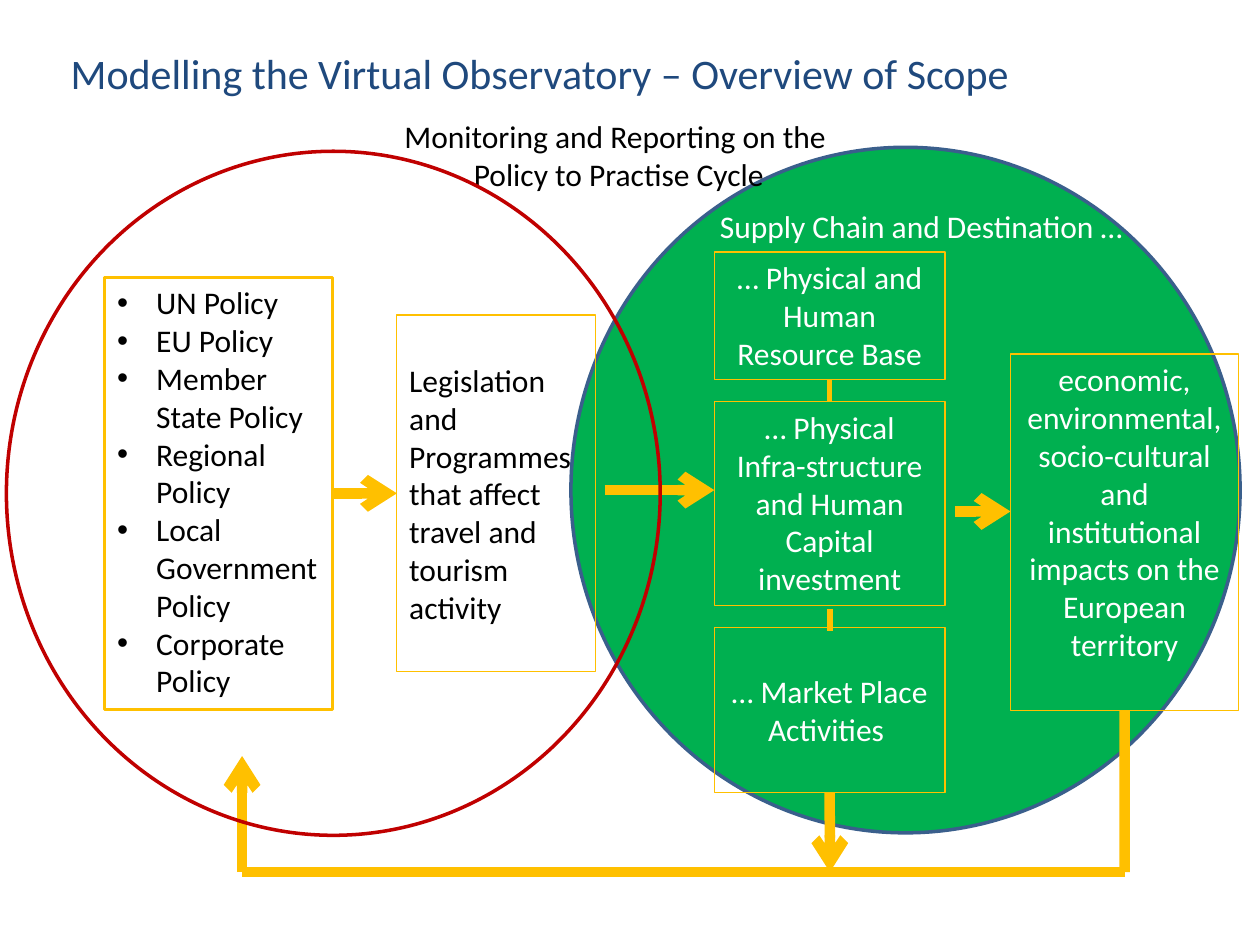
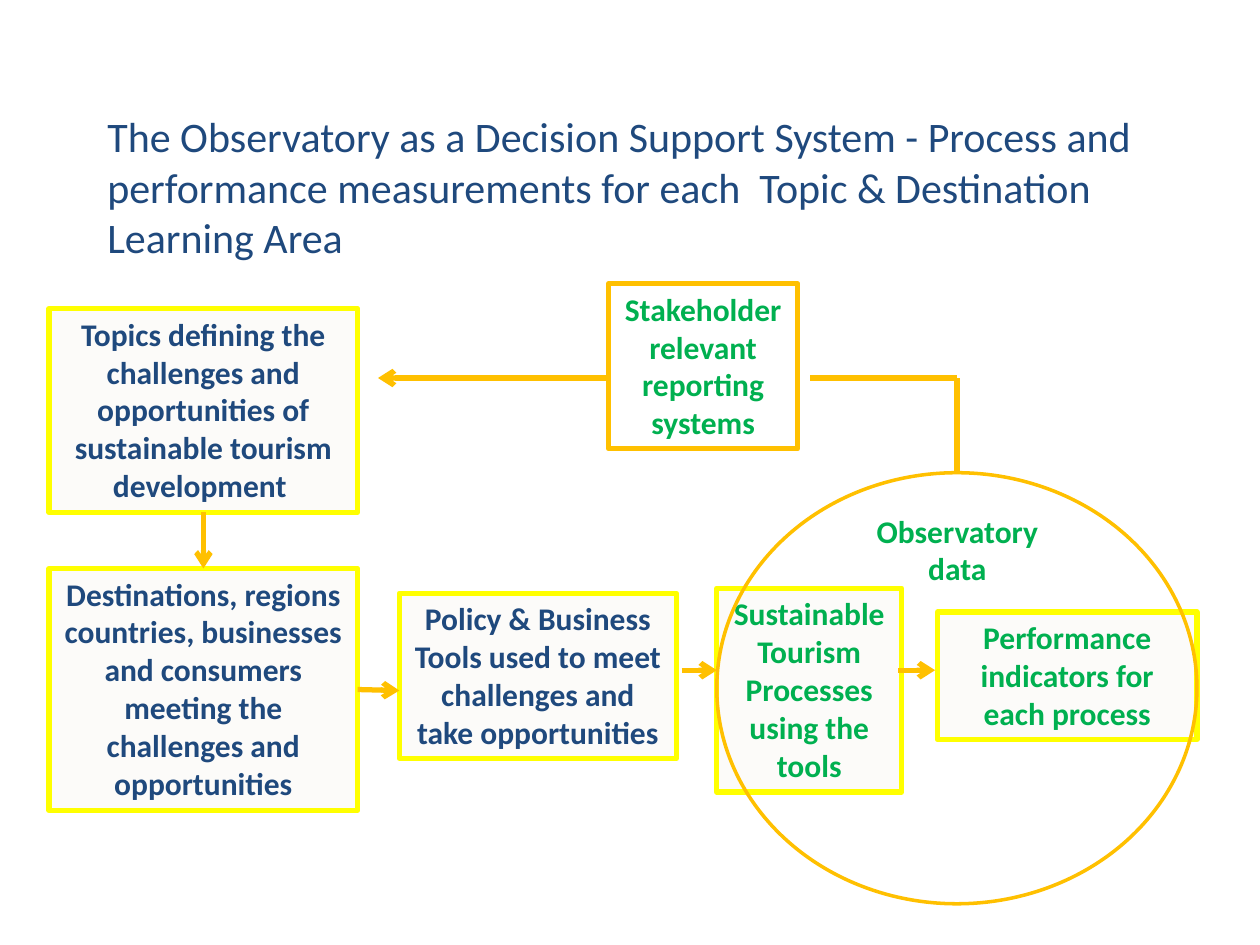
from lxml import etree
from pptx import Presentation
from pptx.dml.color import RGBColor
from pptx.enum.shapes import MSO_CONNECTOR, MSO_SHAPE
from pptx.enum.text import MSO_ANCHOR, MSO_AUTO_SIZE, PP_ALIGN
from pptx.oxml.ns import qn
from pptx.util import Cm, Pt

NAVY, GREEN, AMBER, YELLOW = "1F497D", "00B050", "FFC000", "FFFF00"
RED, STEEL, CREAM, BLACK, WHITE = "C00000", "3A5F8C", "FCFBF9", "000000", "FFFFFF"
TOP, LEFT, BOTTOM, RIGHT = range(4)


def rgb(value):
    return RGBColor.from_string(value)


class Deck:
    """Holds the shared style and the slide being built."""

    frame = {"word_wrap": True, "auto_size": MSO_AUTO_SIZE.NONE}
    font = {"name": "Calibri", "size": Pt(18), "bold": False}
    title_font = {"size": Pt(24)}

    def __init__(self):
        self.prs = Presentation()
        self.prs.slide_width, self.prs.slide_height = Cm(25.4), Cm(19.05)
        self.s = None

    def apply(self, target, values):
        for name, value in values.items():
            setattr(target, name, value)

    def text(self, sp, paragraphs, color, align=PP_ALIGN.CENTER,
             anchor=MSO_ANCHOR.TOP, bullets=False, **font):
        tf = sp.text_frame
        self.apply(tf, {**self.frame, "vertical_anchor": anchor})
        for i, words in enumerate(paragraphs):
            p = tf.add_paragraph() if i else tf.paragraphs[0]
            p.alignment = align
            r = p.add_run()
            r.text = words
            self.apply(r.font, {**self.font, **font})
            r.font.color.rgb = rgb(color)
            if bullets:
                self.bullet(p)

    def bullet(self, p):
        pPr = p._p.get_or_add_pPr()
        pPr.set("marL", str(Cm(0.79)))
        pPr.set("indent", str(-Cm(0.79)))
        etree.SubElement(pPr, qn("a:buFont")).set("typeface", "Arial")
        etree.SubElement(pPr, qn("a:buChar")).set("char", "•")

    def slide(self, title, at):
        self.s = self.prs.slides.add_slide(self.prs.slide_layouts[5])
        sp = self.s.shapes.title
        self.apply(sp, dict(zip(("left", "top", "width", "height"), map(Cm, at))))
        self.text(sp, [title], NAVY, PP_ALIGN.LEFT, **self.title_font)

    def label(self, at, paragraphs, color, **style):
        sp = self.s.shapes.add_textbox(*map(Cm, at))
        self.text(sp, paragraphs, color, **style)

    def shape(self, kind, at, line, width, fill=None):
        sp = self.s.shapes.add_shape(kind, *map(Cm, at))
        sp.shadow.inherit = False
        if fill:
            sp.fill.solid()
            sp.fill.fore_color.rgb = rgb(fill)
        else:
            sp.fill.background()
        sp.line.color.rgb = rgb(line)
        sp.line.width = Pt(width)
        return sp

    def circle(self, at, line, fill=None):
        return self.shape(MSO_SHAPE.OVAL, at, line, 2, fill)

    def box(self, at, paragraphs, color, line=AMBER, width=0.75, fill=None, **style):
        sp = self.shape(MSO_SHAPE.RECTANGLE, at, line, width, fill)
        self.text(sp, paragraphs, color, **style)
        return sp

    def route(self, *stops, width=6, arrow=True):
        """Join stops, each an (x, y) point in cm or a (shape, side) pair."""
        for start, end in zip(stops, stops[1:]):
            points = [(0, 0) if hasattr(stop[0], "shape_id") else stop
                      for stop in (start, end)]
            c = self.s.shapes.add_connector(
                MSO_CONNECTOR.STRAIGHT, *(Cm(v) for point in points for v in point))
            for stop, join in ((start, c.begin_connect), (end, c.end_connect)):
                if hasattr(stop[0], "shape_id"):
                    join(*stop)
            c.line.color.rgb = rgb(AMBER)
            c.line.width = Pt(width)
            spPr = c._element.spPr
            if arrow and end is stops[-1]:
                tail = etree.SubElement(spPr.get_or_add_ln(), qn("a:tailEnd"))
                tail.set("type", "arrow")
            etree.SubElement(spPr, qn("a:effectLst"))


def scope_slide(d):
    d.slide("Modelling the Virtual Observatory – Overview of Scope",
            (1.17, 0.84, 23.93, 1.27))
    d.circle((11.51, 2.97, 13.49, 13.82), STEEL, GREEN)
    d.label((3.18, 2.24, 18.59, 1.8),
            ["Monitoring and Reporting on the ", "Policy to Practise Cycle"], BLACK)
    d.label((13.87, 4.04, 9.55, 1.02), ["Supply Chain and Destination … "], WHITE)

    policies = d.box(
        (2.11, 5.59, 4.6, 8.71),
        ["UN Policy", "EU Policy", "Member State Policy", "Regional Policy",
         "Local Government Policy", "Corporate Policy"],
        BLACK, width=1.5, align=PP_ALIGN.LEFT, bullets=True)
    legislation = d.box(
        (8, 6.35, 4.01, 7.19),
        ["Legislation and Programmes that affect travel and tourism activity"],
        BLACK, align=PP_ALIGN.LEFT, anchor=MSO_ANCHOR.MIDDLE)
    supply = [
        (5.08, 2.57, "… Physical and Human Resource Base", MSO_ANCHOR.TOP),
        (8.1, 4.11, "… Physical Infra-structure and Human Capital investment",
         MSO_ANCHOR.TOP),
        (12.65, 3.33, "… Market Place Activities ", MSO_ANCHOR.MIDDLE),
    ]
    resources, infrastructure, market = [
        d.box((14.4, top, 4.65, height), [words], WHITE, anchor=anchor)
        for top, height, words, anchor in supply]
    impacts = d.box(
        (20.37, 7.14, 4.6, 7.19),
        ["economic, environmental,",
         "socio-cultural and institutional impacts on the European territory"], WHITE)

    d.route((impacts, BOTTOM), (22.67, 17.58), (4.88, 17.58), (4.88, 15.24))
    d.route((policies, RIGHT), (legislation, LEFT))
    d.route((12.19, 9.88), (14.4, 9.88))
    d.route((19.25, 10.31), (20.37, 10.31))
    d.route((resources, BOTTOM), (infrastructure, TOP), width=3, arrow=False)
    d.route((16.73, 12.27), (16.73, 12.73), width=3, arrow=False)
    d.route((market, BOTTOM), (16.73, 17.58))
    d.circle((0.13, 3.05, 13.18, 13.79), RED)


def decision_slide(d):
    d.slide("The Observatory as a Decision Support System - Process and performance "
            "measurements for each  Topic & Destination Learning Area",
            (1.91, 2.11, 22.43, 4.11))
    steps = [
        ((0.99, 6.22, 6.22, 4.11), NAVY,
         "Topics defining the challenges and opportunities of sustainable "
         "tourism development "),
        ((0.99, 11.46, 6.22, 4.88), NAVY,
         "Destinations, regions countries, businesses and consumers meeting "
         "the challenges and opportunities"),
        ((8.05, 11.96, 5.59, 3.33), NAVY,
         "Policy & Business Tools used to meet challenges and take opportunities"),
        ((14.45, 11.86, 3.73, 4.11), GREEN,
         "Sustainable Tourism Processes using the tools"),
        ((18.9, 12.34, 5.23, 2.57), GREEN, "Performance indicators for each process"),
    ]
    topics, destinations, *_ = [
        d.box(at, [words], color, YELLOW, 3, CREAM, bold=True)
        for at, color, words in steps]
    data = d.circle((14.45, 9.53, 9.68, 8.69), AMBER)
    d.label((17.32, 10.19, 3.96, 1.8), ["Observatory data"], GREEN, bold=True)
    d.box((12.27, 5.72, 3.81, 3.33), ["Stakeholder relevant reporting systems"],
          GREEN, width=3, bold=True)

    d.route((topics, BOTTOM), (destinations, TOP), width=3)
    d.route((destinations, RIGHT), (8.05, 13.92), width=3)
    d.route((13.74, 13.51), (14.45, 13.51), width=3)
    d.route((18.11, 13.51), (18.85, 13.51), width=3)
    d.route((data, TOP), (19.29, 7.62), (16.33, 7.62), width=3, arrow=False)
    d.route((12.27, 7.62), (7.62, 7.62), width=3)


def main():
    d = Deck()
    scope_slide(d)
    decision_slide(d)
    d.prs.save("out.pptx")


if __name__ == "__main__":
    main()
